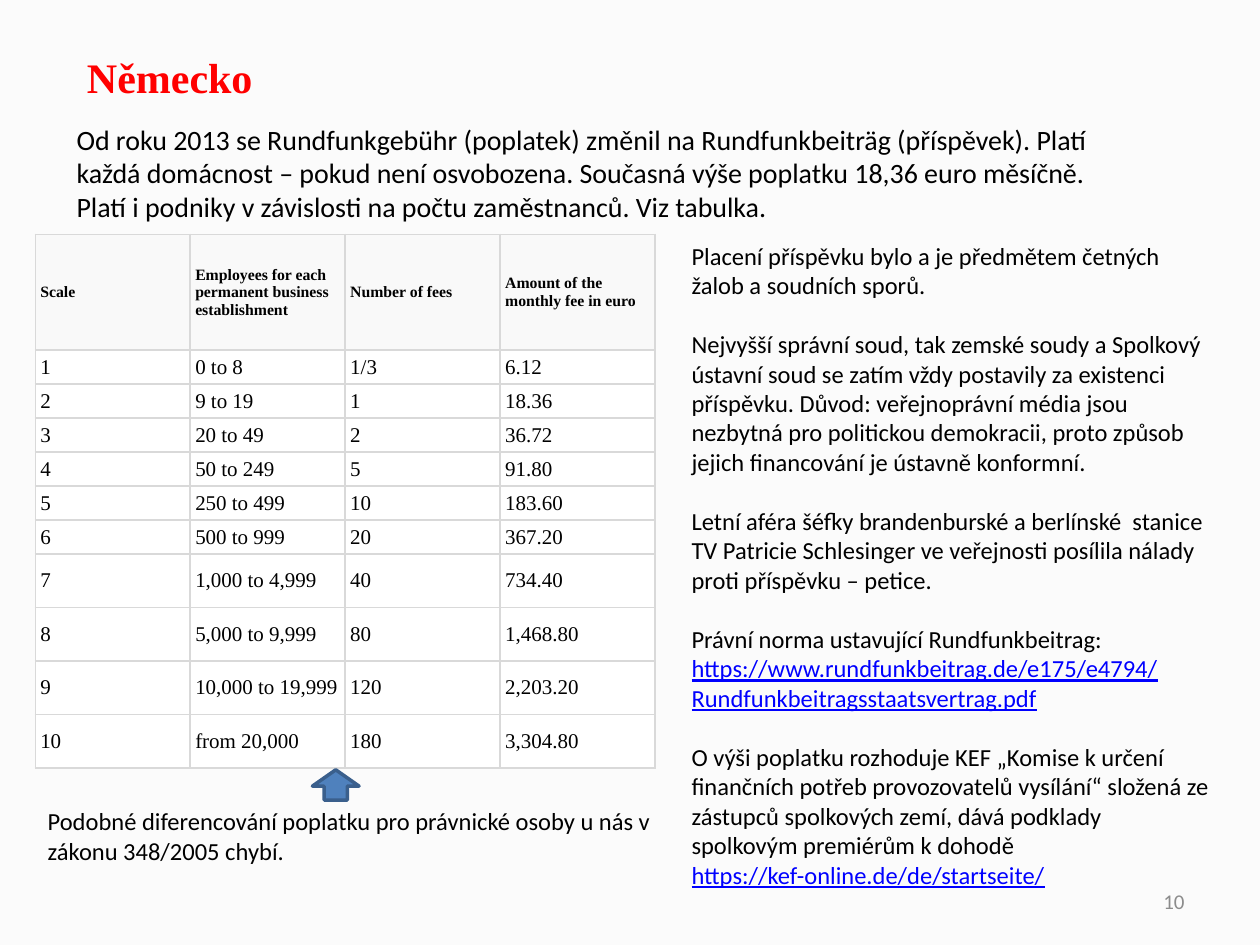
import pptx
import pptx.dml.color
import pptx.enum.shapes
import pptx.enum.text
import pptx.oxml
import pptx.oxml.ns
import pptx.util
from pptx.util import Inches

COLORS = {
    "page": "FBFBFB", "title": "FF0000", "text": "000000", "link": "0000FF",
    "number": "8C8C8C", "header": "F9F9F9", "cell": "FFFFFF", "border": "D9D9D9",
    "arrow": "4F81BD", "arrow_line": "3A5F8C",
}
BODY_FONT = "Calibri"
TABLE_FONT = "Times New Roman"
ALIGN = pptx.enum.text.PP_ALIGN
ANCHOR = pptx.enum.text.MSO_ANCHOR

INTRO = [
    "Od roku 2013 se Rundfunkgebühr (poplatek) změnil na Rundfunkbeiträg (příspěvek). "
    "Platí každá domácnost – pokud není osvobozena. Současná výše poplatku 18,36 euro měsíčně.",
    "Platí i podniky v závislosti na počtu zaměstnanců. Viz tabulka.",
]
COMMENTARY = [
    ["Placení příspěvku bylo a je předmětem četných žalob a soudních sporů."],
    ["Nejvyšší správní soud, tak zemské soudy a Spolkový ústavní soud se zatím vždy postavily "
     "za existenci příspěvku. Důvod: veřejnoprávní média jsou nezbytná pro politickou demokracii, "
     "proto způsob jejich financování je ústavně konformní."],
    ["Letní aféra šéfky brandenburské a berlínské  stanice TV Patricie Schlesinger "
     "ve veřejnosti posílila nálady proti příspěvku – petice."],
    ["Právní norma ustavující Rundfunkbeitrag:",
     "https://www.rundfunkbeitrag.de/e175/e4794/Rundfunkbeitragsstaatsvertrag.pdf"],
    ["O výši poplatku rozhoduje KEF „Komise k určení finančních potřeb provozovatelů vysílání“ "
     "složená ze zástupců spolkových zemí, dává podklady spolkovým premiérům k dohodě",
     "https://kef-online.de/de/startseite/"],
]
CAPTION = ["Podobné diferencování poplatku pro právnické osoby u nás v zákonu 348/2005 chybí."]
FEES = [
    ("Scale", "Employees for each permanent business establishment",
     "Number of fees", "Amount of the monthly fee in euro"),
    ("1", "0 to 8", "1/3", "6.12"),
    ("2", "9 to 19", "1", "18.36"),
    ("3", "20 to 49", "2", "36.72"),
    ("4", "50 to 249", "5", "91.80"),
    ("5", "250 to 499", "10", "183.60"),
    ("6", "500 to 999", "20", "367.20"),
    ("7", "1,000 to 4,999", "40", "734.40"),
    ("8", "5,000 to 9,999", "80", "1,468.80"),
    ("9", "10,000 to 19,999", "120", "2,203.20"),
    ("10", "from 20,000", "180", "3,304.80"),
]
ROW_HEIGHTS = [0.92] + [0.27] * 6 + [0.425] * 4


def color(name):
    return pptx.dml.color.RGBColor.from_string(COLORS[name])


def style(para, size, name="text", font=BODY_FONT, bold=False):
    para.font.name = font
    para.font.size = pptx.util.Pt(size)
    para.font.bold = bold
    para.font.color.rgb = color(name)


def add_text(page, area, lines, size, name="text"):
    box = page.shapes.add_textbox(*map(Inches, area))
    box.text_frame.word_wrap = True
    box.text_frame.text = "\n".join(lines)
    for para in box.text_frame.paragraphs:
        style(para, size, name)
    return box.text_frame


def add_title(page, area):
    title = page.shapes.title
    title.left, title.top, title.width, title.height = map(Inches, area)
    frame = title.text_frame
    frame.text = "Německo"
    frame.word_wrap = False
    frame.auto_size = pptx.enum.text.MSO_AUTO_SIZE.NONE
    frame.vertical_anchor = ANCHOR.TOP
    para = frame.paragraphs[0]
    para.alignment = ALIGN.LEFT
    style(para, 24, "title", TABLE_FONT, True)


def add_borders(cell):
    properties = cell._tc.get_or_add_tcPr()
    for position, side in enumerate(("lnL", "lnR", "lnT", "lnB")):
        properties.insert(position, pptx.oxml.parse_xml(
            f'<a:{side} {pptx.oxml.ns.nsdecls("a")} w="12700"><a:solidFill>'
            f'<a:srgbClr val="{COLORS["border"]}"/></a:solidFill></a:{side}>'))


def add_fee_table(page, area):
    table = page.shapes.add_table(len(FEES), len(FEES[0]), *map(Inches, area)).table
    table.horz_banding = False
    for column in table.columns:
        column.width = Inches(area[2] / len(FEES[0]))
    for row_index, values in enumerate(FEES):
        header = row_index == 0
        table.rows[row_index].height = Inches(ROW_HEIGHTS[row_index])
        for column_index, value in enumerate(values):
            cell = table.cell(row_index, column_index)
            cell.text = value
            cell.vertical_anchor = ANCHOR.MIDDLE
            cell.margin_left = cell.margin_right = Inches(0.04)
            cell.margin_top = cell.margin_bottom = Inches(0.04)
            cell.fill.solid()
            cell.fill.fore_color.rgb = color("header" if header else "cell")
            style(cell.text_frame.paragraphs[0], 9 if header else 12,
                  font=TABLE_FONT, bold=header)
            add_borders(cell)


def add_commentary(page, area):
    lines = [line for group in COMMENTARY for line in group]
    group_starts = [group[0] for group in COMMENTARY[1:]]
    for para in add_text(page, area, lines, 14).paragraphs:
        if para.text in group_starts:
            para.space_before = pptx.util.Pt(17)
        if para.text.startswith("https:"):
            para.font.color.rgb = color("link")
            para.font.underline = True


def add_arrow(page, area):
    arrow = page.shapes.add_shape(pptx.enum.shapes.MSO_SHAPE.UP_ARROW, *map(Inches, area))
    arrow.adjustments[0] = 0.5
    arrow.adjustments[1] = 0.54
    arrow.shadow.inherit = False
    arrow.fill.solid()
    arrow.fill.fore_color.rgb = color("arrow")
    arrow.line.color.rgb = color("arrow_line")
    arrow.line.width = pptx.util.Pt(2)


def add_page_number(page, area):
    frame = add_text(page, area, ["10"], 12, "number")
    frame.vertical_anchor = ANCHOR.MIDDLE
    frame.paragraphs[0].alignment = ALIGN.RIGHT


def main():
    deck = pptx.Presentation()
    deck.slide_width, deck.slide_height = Inches(10), Inches(7.5)
    page = deck.slides.add_slide(deck.slide_layouts[5])
    page.background.fill.solid()
    page.background.fill.fore_color.rgb = color("page")
    add_title(page, (0.59, 0.36, 1.53, 0.5))
    add_fee_table(page, (0.28, 1.86, 4.92, 4.24))
    add_text(page, (0.51, 0.92, 8.66, 0.91), INTRO, 16)
    add_commentary(page, (5.39, 1.86, 4.33, 5.28))
    add_text(page, (0.28, 6.35, 5.04, 0.57), CAPTION, 14)
    add_arrow(page, (2.48, 6.11, 0.37, 0.24))
    add_page_number(page, (7.17, 6.95, 2.33, 0.4))
    deck.save("out.pptx")


if __name__ == "__main__":
    main()
